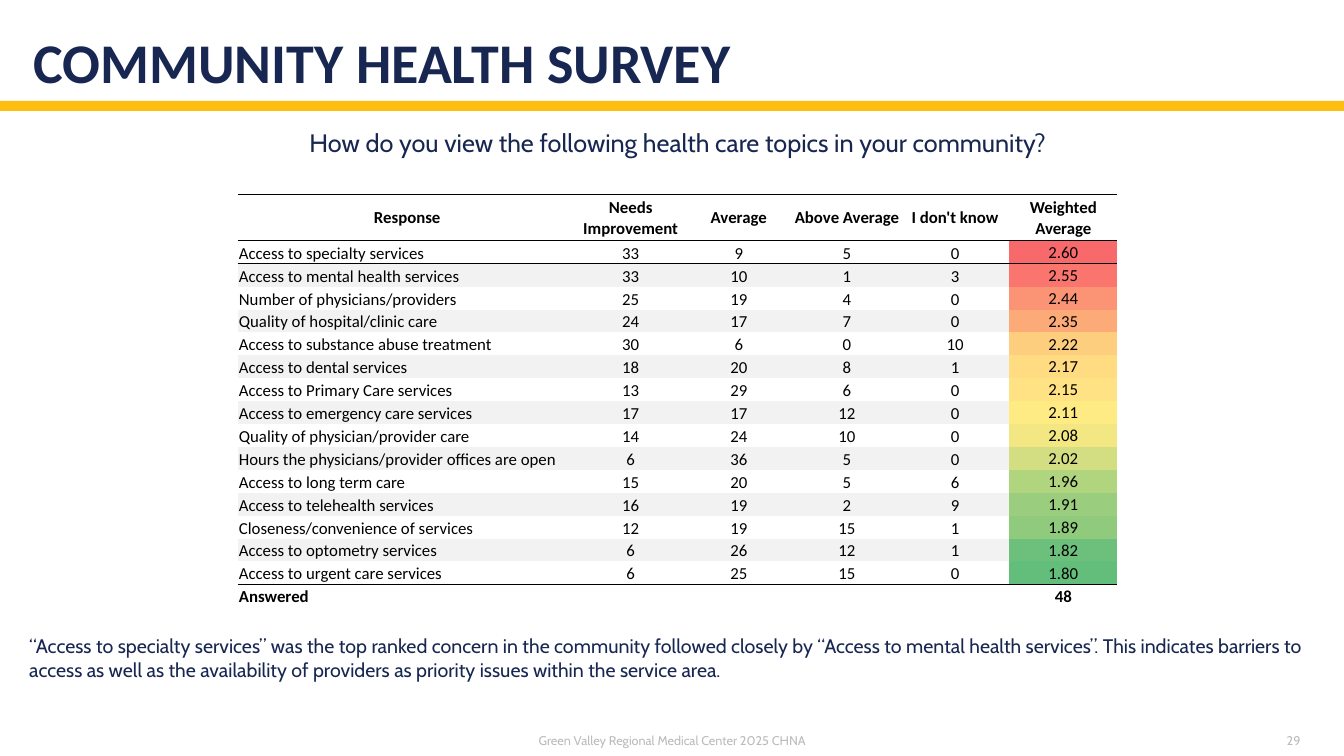
import dataclasses
import typing

import lxml.etree
import pptx
import pptx.dml.color
import pptx.enum.shapes
import pptx.enum.text
import pptx.oxml.ns
import pptx.slide
import pptx.table
import pptx.text.text
import pptx.util

SLIDE_WIDTH = pptx.util.Inches(13.33)
SLIDE_HEIGHT = pptx.util.Inches(7.5)
NAVY, GOLD, GREY, BLACK, WHITE, BAND = "182751", "FEBD11", "BDBBBA", "000000", "FFFFFF", "F2F2F2"
NO_GRID_STYLE = "{2D5ABB26-0587-4C30-8999-92F81FD0307C}"
ALIGN = pptx.enum.text.PP_ALIGN
ANCHOR = pptx.enum.text.MSO_ANCHOR
INCH = pptx.util.Inches


@dataclasses.dataclass(frozen=True)
class Area:
    """Percentages of the slide's width and height."""

    left: float
    top: float
    width: float
    height: float

    def lengths(self) -> tuple[int, int, int, int]:
        return across(self.left), down(self.top), across(self.width), down(self.height)


@dataclasses.dataclass(frozen=True)
class Caption:
    text: str
    area: Area
    font: dict[str, typing.Any]
    color: str
    frame: dict[str, typing.Any] = dataclasses.field(default_factory=dict)
    para: dict[str, typing.Any] = dataclasses.field(default_factory=dict)


@dataclasses.dataclass(frozen=True)
class Topic:
    name: str
    counts: tuple[int, int, int, int]
    average: float
    heat: str


def across(percent: float) -> int:
    return round(SLIDE_WIDTH * percent / 100)


def down(percent: float) -> int:
    return round(SLIDE_HEIGHT * percent / 100)


def color_of(value: str) -> pptx.dml.color.RGBColor:
    return pptx.dml.color.RGBColor.from_string(value)


def apply_format(target: typing.Any, values: dict[str, typing.Any]) -> None:
    for name, value in values.items():
        setattr(target, name, value)


def font_of(name: str, size: float, bold: bool = False) -> dict[str, typing.Any]:
    return {"name": name, "size": pptx.util.Pt(size), "bold": bold}


def write_span(para: typing.Any, text: str, font: dict[str, typing.Any], color: str) -> None:
    span = para.add_run()
    span.text = text
    apply_format(span.font, font)
    span.font.color.rgb = color_of(color)


def draw_caption(page: pptx.slide.Slide, caption: Caption) -> None:
    frame = page.shapes.add_textbox(*caption.area.lengths()).text_frame
    apply_format(frame, {"word_wrap": True} | caption.frame)
    para = frame.paragraphs[0]
    apply_format(para, caption.para)
    write_span(para, caption.text, caption.font, caption.color)


def draw_border(cell: typing.Any, side: str, points: float) -> None:
    qn = pptx.oxml.ns.qn
    properties = cell._tc.get_or_add_tcPr()
    line = lxml.etree.SubElement(properties, qn(f"a:{side}"), w=str(pptx.util.Pt(points)))
    fill = lxml.etree.SubElement(line, qn("a:solidFill"))
    lxml.etree.SubElement(fill, qn("a:srgbClr"), val=BLACK)


def fill_cell(cell: typing.Any, text: str, fill: str, bold: bool, align: typing.Any,
              anchor: typing.Any, borders: dict[str, float]) -> None:
    apply_format(cell, {"margin_left": INCH(0.01), "margin_right": INCH(0.01),
                        "margin_top": INCH(0.01), "margin_bottom": 0,
                        "vertical_anchor": anchor})
    for side, points in borders.items():
        draw_border(cell, side, points)
    cell.fill.solid()
    cell.fill.fore_color.rgb = color_of(fill)
    para = cell.text_frame.paragraphs[0]
    para.alignment = align
    if text:
        write_span(para, text, font_of("Calibri", 12, bold), BLACK)
    else:
        lxml.etree.SubElement(para._p, pptx.oxml.ns.qn("a:endParaRPr"), sz="1200")


def draw_survey(page: pptx.slide.Slide, area: Area, headings: list[str],
                topics: list[Topic], answered: int) -> None:
    rows = [headings]
    rows += [[topic.name, *map(str, topic.counts), f"{topic.average:.2f}"] for topic in topics]
    rows += [["Answered", "", "", "", "", str(answered)]]
    last_row, last_column = len(rows) - 1, len(headings) - 1
    borders = {0: {"lnT": 1, "lnB": 1}, 1: {"lnT": 1},
               last_row - 1: {"lnB": 0.5}, last_row: {"lnT": 0.5}}
    graphic = page.shapes.add_table(len(rows), len(headings), *area.lengths())
    for style in graphic.element.iter(pptx.oxml.ns.qn("a:tableStyleId")):
        style.text = NO_GRID_STYLE
    table = graphic.table
    apply_format(table, {"first_row": False, "horz_banding": False})

    for index, column in enumerate(table.columns):
        column.width = across(8.05 if index else 25.2)
    for row_index, texts in enumerate(rows):
        table.rows[row_index].height = down(3.03 if row_index else 6.13)
        is_topic = 0 < row_index < last_row
        for column_index, text in enumerate(texts):
            is_average = is_topic and column_index == last_column
            fill = BAND if is_topic and row_index % 2 == 0 else WHITE
            if is_average:
                fill = topics[row_index - 1].heat
            fill_cell(
                table.cell(row_index, column_index), text, fill, not is_topic,
                ALIGN.LEFT if row_index and not column_index else ALIGN.CENTER,
                ANCHOR.MIDDLE if is_average or not row_index else ANCHOR.BOTTOM,
                borders.get(row_index, {}))


HEADINGS = ["Response", "Needs Improvement", "Average", "Above Average", "I don't know",
            "Weighted Average"]
TOPICS = [
    Topic("Access to specialty services", (33, 9, 5, 0), 2.60, "F8696B"),
    Topic("Access to mental health services", (33, 10, 1, 3), 2.55, "F9756E"),
    Topic("Number of physicians/providers", (25, 19, 4, 0), 2.44, "FB9474"),
    Topic("Quality of hospital/clinic care", (24, 17, 7, 0), 2.35, "FCAA78"),
    Topic("Access to substance abuse treatment", (30, 6, 0, 10), 2.22, "FECE7F"),
    Topic("Access to dental services", (18, 20, 8, 1), 2.17, "FFDB81"),
    Topic("Access to Primary Care services", (13, 29, 6, 0), 2.15, "FFE283"),
    Topic("Access to emergency care services", (17, 17, 12, 0), 2.11, "FFEB84"),
    Topic("Quality of physician/provider care", (14, 24, 10, 0), 2.08, "F2E783"),
    Topic("Hours the physicians/provider offices are open", (6, 36, 5, 0), 2.02, "D2DE81"),
    Topic("Access to long term care", (15, 20, 5, 6), 1.96, "B1D47F"),
    Topic("Access to telehealth services", (16, 19, 2, 9), 1.91, "9ACE7E"),
    Topic("Closeness/convenience of services", (12, 19, 15, 1), 1.89, "90CB7D"),
    Topic("Access to optometry services", (6, 26, 12, 1), 1.82, "6CC07B"),
    Topic("Access to urgent care services", (6, 25, 15, 0), 1.80, "63BE7B"),
]
CAPTIONS = [
    Caption("COMMUNITY HEALTH SURVEY", Area(2.5, 0, 95, 13.33), font_of("Calibri", 40, True), NAVY,
            {"vertical_anchor": ANCHOR.BOTTOM, "margin_left": 0, "margin_right": 0},
            {"line_spacing": 0.9}),
    Caption("Green Valley Regional Medical Center 2025 CHNA", Area(20, 96.67, 60, 2.67),
            font_of("Cabin", 9), GREY, {"vertical_anchor": ANCHOR.MIDDLE},
            {"alignment": ALIGN.CENTER}),
    Caption("29", Area(90, 96.67, 7.5, 2.67), font_of("Cabin", 9), GREY,
            {"vertical_anchor": ANCHOR.MIDDLE}, {"alignment": ALIGN.RIGHT}),
    Caption("How do you view the following health care topics in your community?",
            Area(2.5, 16.13, 95.85, 5.33), font_of("Cabin", 18), NAVY,
            para={"alignment": ALIGN.CENTER}),
    Caption("“Access to specialty services” was the top ranked concern in the community followed "
            "closely by “Access to mental health services”. This indicates barriers to access as "
            "well as the availability of providers as priority issues within the service area.",
            Area(1.43, 83.2, 97, 7.6), font_of("Cabin", 14), NAVY,
            para={"space_after": pptx.util.Pt(12)}),
]


def main() -> None:
    deck = pptx.Presentation()
    apply_format(deck, {"slide_width": SLIDE_WIDTH, "slide_height": SLIDE_HEIGHT})
    page = deck.slides.add_slide(deck.slide_layouts[6])
    rule = page.shapes.add_shape(pptx.enum.shapes.MSO_SHAPE.RECTANGLE,
                                 *Area(0, 13.33, 100, 1.33).lengths())
    rule.shadow.inherit = False
    rule.fill.solid()
    rule.fill.fore_color.rgb = color_of(GOLD)
    rule.line.fill.background()
    for caption in CAPTIONS:
        draw_caption(page, caption)
    draw_survey(page, Area(17.7, 25.73, 65.45, 54.61), HEADINGS, TOPICS, 48)
    deck.save("out.pptx")


if __name__ == "__main__":
    main()
